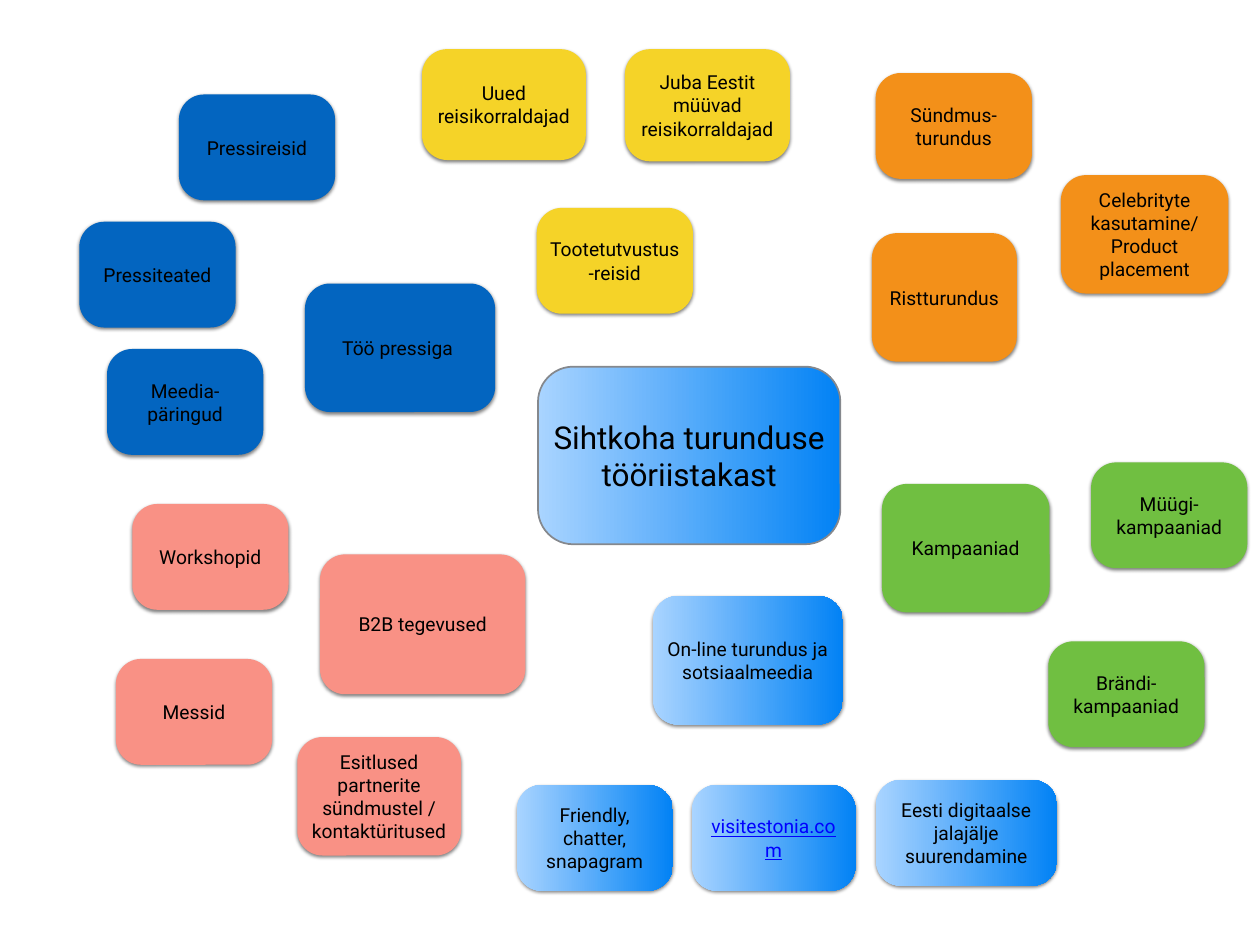
from lxml.etree import SubElement
from pptx import Presentation
from pptx.dml.color import RGBColor
from pptx.enum.shapes import MSO_SHAPE as Shape
from pptx.enum.text import MSO_ANCHOR as Anchor, MSO_AUTO_SIZE as AutoSize, PP_ALIGN as Align
from pptx.oxml.ns import qn
from pptx.util import Inches, Pt

BLUE = RGBColor(0x03, 0x65, 0xC0)
YELLOW = RGBColor(0xF5, 0xD3, 0x28)
ORANGE = RGBColor(0xF3, 0x90, 0x19)
GREEN = RGBColor(0x70, 0xBF, 0x41)
PINK = RGBColor(0xF9, 0x91, 0x85)
SKY = (RGBColor(0xA9, 0xD4, 0xFF), RGBColor(0x02, 0x82, 0xF5))  # gradient ends
GREY = RGBColor(0x85, 0x88, 0x8D)
BLACK = RGBColor(0, 0, 0)
LINK_BLUE = RGBColor(0, 0, 0xFF)

FONT = "Roboto"
WEB_ADDRESS = "visitestonia.com"

# Each theme: its fill, then its tiles as (text, left, top, width, height)
THEMES = [
    (BLUE, [
        ("Töö pressiga ", 2.42, 2.25, 1.51, 1.02),
        ("Pressireisid", 1.42, 0.75, 1.24, 0.84),
        ("Pressiteated", 0.63, 1.76, 1.24, 0.84),
        ("Meedia-päringud", 0.85, 2.77, 1.24, 0.84),
    ]),
    (YELLOW, [
        ("Tootetutvustus-reisid", 4.26, 1.65, 1.24, 0.84),
        ("Uued reisikorraldajad", 3.35, 0.39, 1.3, 0.88),
        ("Juba Eestit müüvad reisikorraldajad", 4.96, 0.39, 1.31, 0.89),
    ]),
    (ORANGE, [
        ("Ristturundus", 6.92, 1.85, 1.15, 1.02),
        ("Sündmus-turundus", 6.95, 0.58, 1.24, 0.84),
        ("Celebrityte kasutamine/ Product placement", 8.42, 1.39, 1.33, 0.94),
    ]),
    (GREEN, [
        ("Kampaaniad", 7, 3.84, 1.33, 1.02),
        ("Müügi-kampaaniad", 8.66, 3.67, 1.24, 0.84),
        ("Brändi-kampaaniad", 8.32, 5.09, 1.24, 0.84),
    ]),
    (SKY, [
        ("On-line turundus ja sotsiaalmeedia", 5.18, 4.73, 1.51, 1.02),
        ("Friendly, chatter, snapagram", 4.1, 6.23, 1.24, 0.84),
        (WEB_ADDRESS, 5.49, 6.23, 1.3, 0.84),
        ("Eesti digitaalse jalajälje suurendamine", 6.95, 6.19, 1.44, 0.84),
    ]),
    (PINK, [
        ("B2B tegevused", 2.54, 4.4, 1.63, 1.11),
        ("Workshopid", 1.05, 4, 1.24, 0.84),
        ("Messid", 0.92, 5.23, 1.24, 0.84),
        ("Esitlused partnerite sündmustel / kontaktüritused", 2.36, 5.85, 1.3, 0.94),
    ]),
]


def write_text(holder, text, size=11, color=BLACK, underline=False):
    """Put centred text in the middle of a shape or placeholder."""
    frame = holder.text_frame
    frame.word_wrap = True
    frame.auto_size = AutoSize.NONE
    frame.vertical_anchor = Anchor.MIDDLE
    frame.margin_left = frame.margin_right = Inches(0.04)
    frame.margin_top = frame.margin_bottom = Inches(0.04)
    paragraph = frame.paragraphs[0]
    paragraph.alignment = Align.CENTER
    run = paragraph.add_run()
    run.text = text
    run.font.name = FONT
    run.font.size = Pt(size)
    run.font.color.rgb = color
    run.font.underline = underline


def add_shadow(tile):
    """Cast a soft shadow straight down."""
    effects = tile._element.spPr.find(qn("a:effectLst"))
    shadow = SubElement(effects, qn("a:outerShdw"), blurRad=str(Pt(2)),
                        dist=str(Pt(1)), dir="5400000", rotWithShape="0")
    tint = SubElement(shadow, qn("a:srgbClr"), val=str(BLACK))
    SubElement(tint, qn("a:alpha"), val="50000")


def add_tile(slide, left, top, width, height, fill, radius=0.2):
    """Draw a rounded tile whose corners have the given radius in inches."""
    tile = slide.shapes.add_shape(Shape.ROUNDED_RECTANGLE, Inches(left), Inches(top),
                                  Inches(width), Inches(height))
    tile.adjustments[0] = radius / min(width, height)
    tile.shadow.inherit = False
    tile.line.fill.background()
    if fill is SKY:
        tile.fill.gradient()
        tile.fill.gradient_angle = 0
        for stop, color in zip(tile.fill.gradient_stops, SKY):
            stop.color.rgb = color
    else:
        tile.fill.solid()
        tile.fill.fore_color.rgb = fill
    return tile


def add_center(slide):
    """Draw the central tile and lay the slide title over it."""
    center = add_tile(slide, 4.27, 2.91, 2.4, 1.41, SKY, radius=0.28)
    center.line.color.rgb = GREY
    center.line.width = Pt(1)

    title = slide.shapes.title
    title.left, title.top = Inches(4.32), Inches(3.27)
    title.width, title.height = Inches(2.3), Inches(0.69)
    write_text(title, "Sihtkoha turunduse tööriistakast", size=18)
    center._element.addnext(title._element)  # bring in front of the tile


def main():
    deck = Presentation()
    deck.slide_width, deck.slide_height = Inches(10), Inches(7.5)
    slide = deck.slides.add_slide(deck.slide_layouts[5])

    add_center(slide)

    # Tools around the centre, one colour per theme
    for fill, tools in THEMES:
        for text, *place in tools:
            tile = add_tile(slide, *place, fill)
            add_shadow(tile)
            is_link = text == WEB_ADDRESS
            write_text(tile, text, color=LINK_BLUE if is_link else BLACK, underline=is_link)

    deck.save("out.pptx")


if __name__ == "__main__":
    main()
